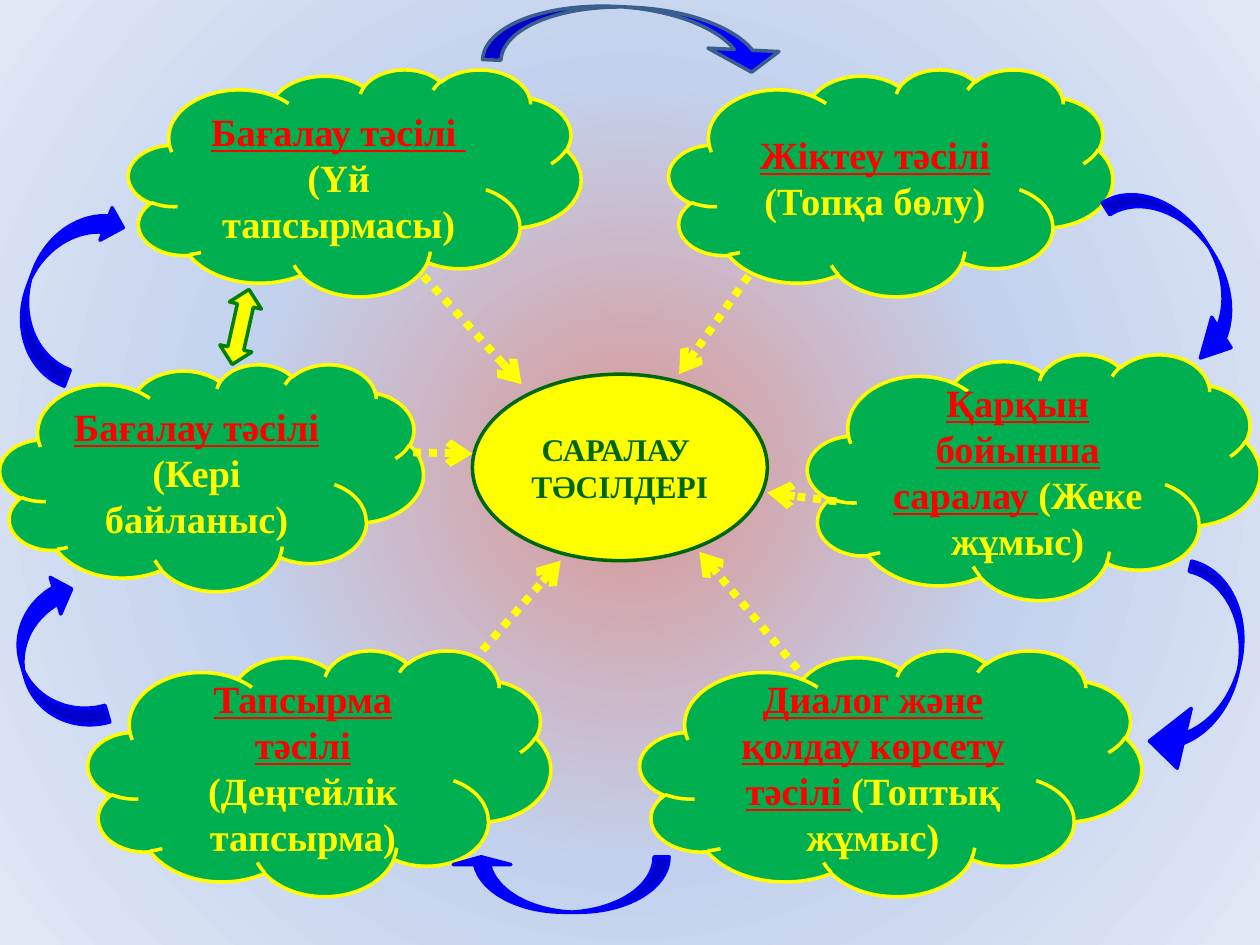
import lxml.etree
import pptx
import pptx.dml.color
import pptx.enum.dml
import pptx.enum.shapes
import pptx.enum.text
import pptx.oxml
import pptx.oxml.ns
import pptx.util

EMU_PER_PX = 9144  # 100 px to the inch
SHAPE = pptx.enum.shapes.MSO_SHAPE
qn = pptx.oxml.ns.qn

GREEN, YELLOW, RED, BLUE = "00B050", "FFFF00", "FF0000", "0000FF"
DARK_GREEN, ARROW_GREEN, STEEL = "006600", "008000", "3A5F8C"


def px(length):
    return pptx.util.Emu(length * EMU_PER_PX)


def color(hex_text):
    return pptx.dml.color.RGBColor.from_string(hex_text)


class Diagram:
    font_name = "Times New Roman"
    topic_size = 22
    center_size = 18
    outline = 2

    def __init__(self, page):
        self.page = page

    def background(self, stops):
        """Fill the page with a circular gradient that starts at its centre."""
        stop_xml = "".join(
            f'<a:gs pos="{percent * 1000}"><a:srgbClr val="{shade}"/></a:gs>'
            for percent, shade in stops
        )
        fill = pptx.oxml.parse_xml(
            f'<p:bg {pptx.oxml.ns.nsdecls("p", "a")}><p:bgPr><a:gradFill rotWithShape="1">'
            f'<a:gsLst>{stop_xml}</a:gsLst><a:path path="circle">'
            '<a:fillToRect l="50000" t="50000" r="50000" b="50000"/></a:path>'
            "</a:gradFill><a:effectLst/></p:bgPr></p:bg>"
        )
        self.page.element.cSld.insert(0, fill)

    def shape(self, kind, place, fill, line, rotation=0, adjustments=()):
        shape = self.page.shapes.add_shape(kind, *map(px, place))
        shape.shadow.inherit = False
        shape.fill.solid()
        shape.fill.fore_color.rgb = color(fill)
        shape.line.color.rgb = color(line)
        shape.line.width = pptx.util.Pt(self.outline)
        shape.rotation = rotation
        for index, value in enumerate(adjustments):
            shape.adjustments[index] = value
        return shape

    def label(self, shape, paragraphs, size):
        """Fill a shape with centred paragraphs of (text, colour, underlined) spans."""
        frame = shape.text_frame
        frame.word_wrap = True
        frame.vertical_anchor = pptx.enum.text.MSO_ANCHOR.MIDDLE
        for index, spans in enumerate(paragraphs):
            para = frame.add_paragraph() if index else frame.paragraphs[0]
            para.alignment = pptx.enum.text.PP_ALIGN.CENTER
            for text, shade, underlined in spans:
                span = para.add_run()
                span.text = text
                span.font.name = self.font_name
                span.font.size = pptx.util.Pt(size)
                span.font.bold = True
                span.font.underline = underlined
                span.font.color.rgb = color(shade)

    def cloud(self, place, method, example, two_paragraphs=False):
        spans = [(method, RED, True), (example, YELLOW, False)]
        paragraphs = [[span] for span in spans] if two_paragraphs else [spans]
        self.label(self.shape(SHAPE.CLOUD, place, GREEN, YELLOW), paragraphs, self.topic_size)

    def center(self, place, lines):
        oval = self.shape(SHAPE.OVAL, place, YELLOW, DARK_GREEN)
        self.label(oval, [[(line, DARK_GREEN, False)] for line in lines], self.center_size)

    def curved_arrow(self, place, rotation, adjustments, line=BLUE):
        self.shape(SHAPE.CURVED_DOWN_ARROW, place, BLUE, line, rotation, adjustments)

    def dotted_arrow(self, start, end):
        arrow = self.page.shapes.add_connector(
            pptx.enum.shapes.MSO_CONNECTOR.STRAIGHT, *map(px, start + end)
        )
        arrow.line.color.rgb = color(YELLOW)
        arrow.line.width = pptx.util.Pt(4.5)
        arrow.line.dash_style = pptx.enum.dml.MSO_LINE.ROUND_DOT
        properties = arrow.element.spPr
        lxml.etree.SubElement(properties.find(qn("a:ln")), qn("a:tailEnd"), type="arrow")
        lxml.etree.SubElement(properties, qn("a:effectLst"))


def main():
    deck = pptx.Presentation()
    deck.slide_width, deck.slide_height = px(1000), px(750)
    diagram = Diagram(deck.slides.add_slide(deck.slide_layouts[6]))
    diagram.background([(0, "D99694"), (50, "C2D1ED"), (100, "E1E8F5")])

    diagram.cloud((102, 55, 359, 180), "Бағалау тәсілі ", "(Үй тапсырмасы)", two_paragraphs=True)
    diagram.center((375, 297, 234, 148), ["САРАЛАУ ", "ТӘСІЛДЕРІ"])
    for place, method, example in [
        ((70, 516, 367, 195), "Тапсырма тәсілі ", "(Деңгейлік тапсырма)"),
        ((508, 516, 398, 195), "Диалог және қолдау көрсету тәсілі ", "(Топтық жұмыс)"),
        ((531, 55, 352, 180), "Жіктеу тәсілі ", "(Топқа бөлу)"),
        ((0, 289, 336, 180), "Бағалау тәсілі ", "(Кері байланыс)"),
        ((641, 281, 359, 195), "Қарқын бойынша саралау ", "(Жеке жұмыс)"),
    ]:
        diagram.cloud(place, method, example)

    diagram.curved_arrow((384, 6, 242, 47), 2.7, (0.31, 1.2, 0.37), line=STEEL)
    diagram.shape(
        SHAPE.UP_DOWN_ARROW, (178, 229, 26, 61), YELLOW, ARROW_GREEN, 12.6, (0.3, 0.5)
    )
    for place, rotation, adjustments in [
        ((860, 188, 160, 53), 57.7, (0.21, 0.54, 0.47)),
        ((868, 507, 171, 56), 103.2, (0.15, 0.87, 0.47)),
        ((359, 680, 172, 44), 180, (0.27, 1.04, 0.14)),
        ((-19, 493, 125, 55), 254, (0.25, 0.55, 0.25)),
        ((-23, 200, 148, 55), 290.4, ()),
    ]:
        diagram.curved_arrow(place, rotation, adjustments)

    for start, end in [
        ((594, 219), (539, 297)),
        ((664, 398), (609, 391)),
        ((633, 531), (555, 438)),
        ((383, 516), (445, 445)),
        ((336, 219), (414, 305)),
        ((328, 359), (375, 360)),
    ]:
        diagram.dotted_arrow(start, end)

    deck.save("out.pptx")


if __name__ == "__main__":
    main()
